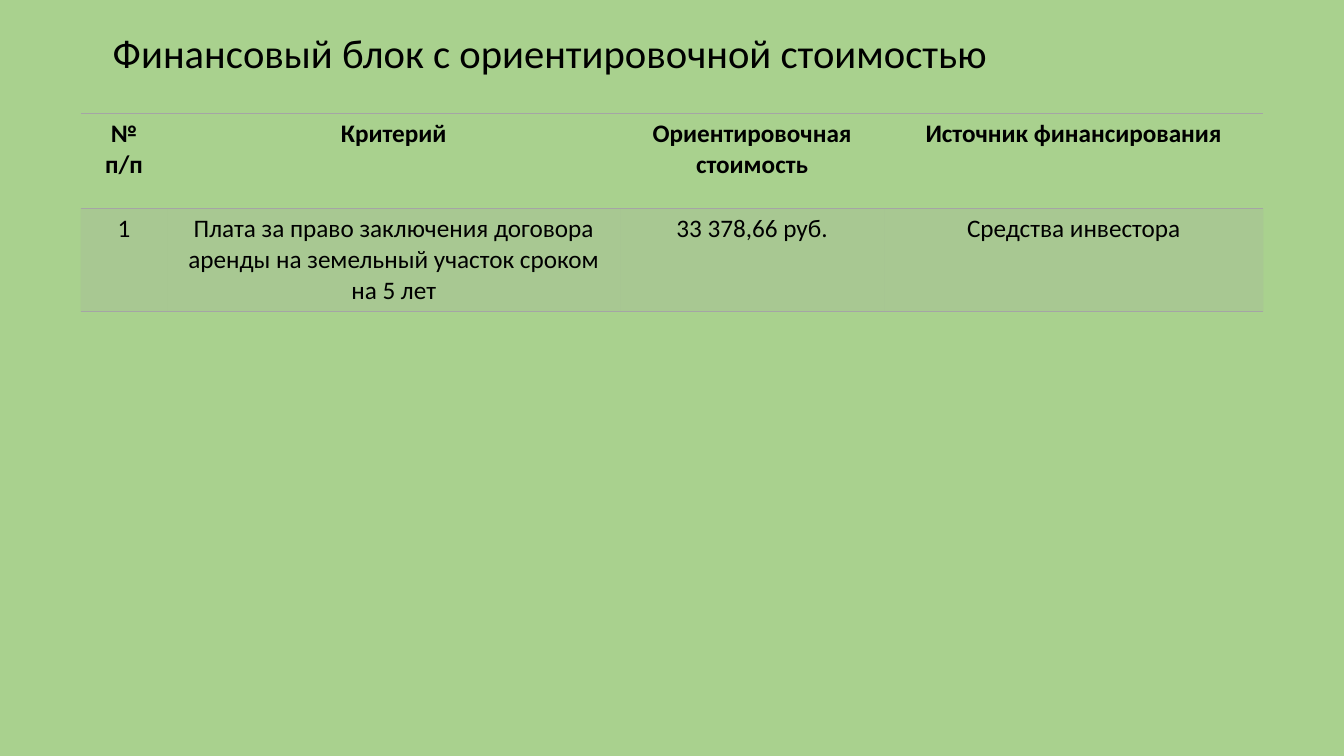
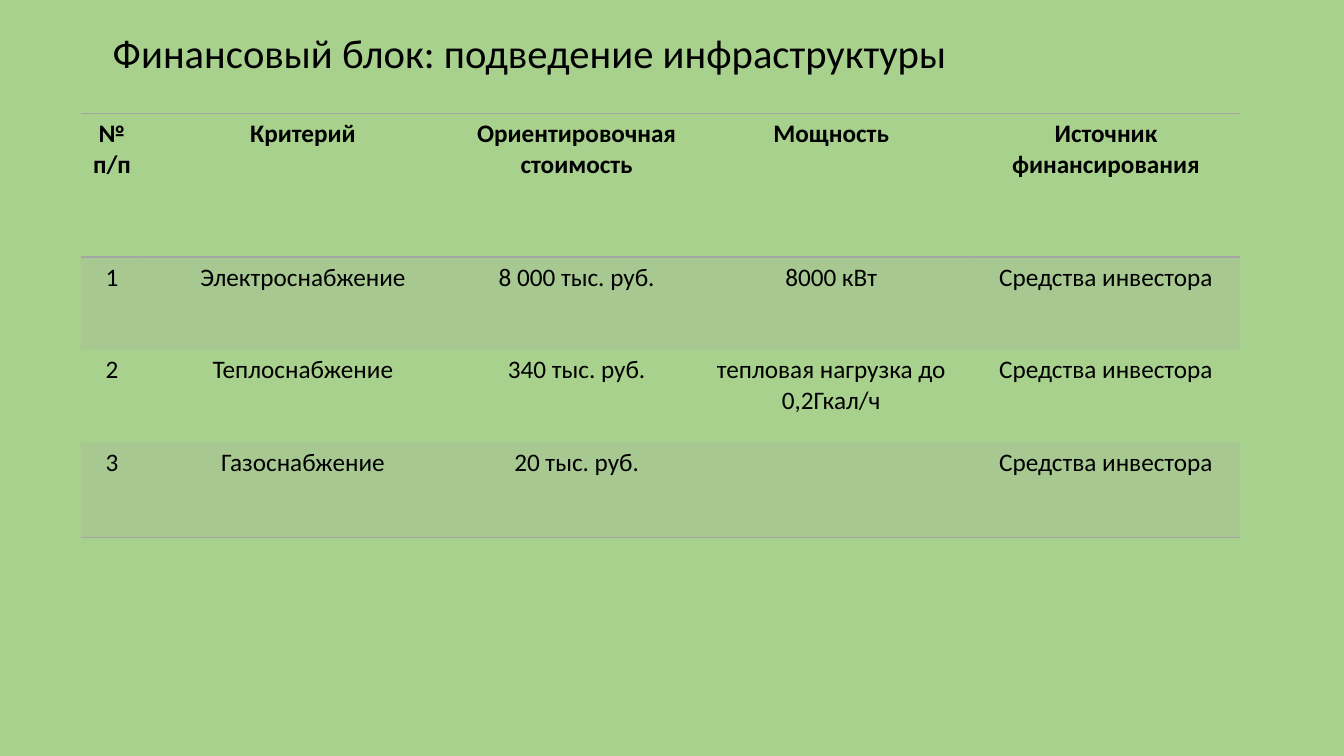
from lxml.etree import SubElement
from pptx import Presentation
from pptx.dml.color import RGBColor
from pptx.enum.text import MSO_ANCHOR, PP_ALIGN
from pptx.oxml.ns import qn
from pptx.util import Inches, Pt

FONT = "Calibri"
BACKGROUND, GRAY, BLACK = "A9D18E", "A5A5A5", "000000"
PLAIN_TABLE_STYLE = "{2D5ABB26-0587-4C30-8999-92F81FD0307C}"
TABLE_LEFT, TABLE_TOP = 0.8, 1.13
INVESTOR = "Средства инвестора"

SLIDES = [
    {
        "title": "Финансовый блок с ориентировочной стоимостью",
        "widths": [0.86, 4.49, 2.62, 3.76],
        "heights": [0.94, 1.02],
        "rows": [
            ["№ п/п", "Критерий", "Ориентировочная стоимость", "Источник финансирования"],
            [
                "1",
                "Плата за право заключения договора аренды на земельный участок сроком на 5 лет",
                "33 378,66 руб.",
                INVESTOR,
            ],
        ],
    },
    {
        "title": "Финансовый блок: подведение инфраструктуры",
        "widths": [0.62, 3.17, 2.26, 2.79, 2.66],
        "heights": [1.42, 0.92, 0.92, 0.94],
        "rows": [
            ["№ п/п", "Критерий", "Ориентировочная стоимость", "Мощность", "Источник финансирования"],
            ["1", "Электроснабжение", "8 000 тыс. руб.", "8000 кВт", INVESTOR],
            ["2", "Теплоснабжение", "340 тыс. руб.", "тепловая нагрузка до 0,2Гкал/ч", INVESTOR],
            ["3", "Газоснабжение", "20 тыс. руб.", "", INVESTOR],
        ],
    },
]


def color(value):
    return RGBColor.from_string(value)


def add_text(paragraph, text, size, bold=False):
    run = paragraph.add_run()
    run.text = text
    run.font.name = FONT
    run.font.size = Pt(size)
    run.font.bold = bold
    run.font.color.rgb = color(BLACK)


def add_title(slide, text):
    shape = slide.shapes.add_textbox(Inches(1.02), Inches(0.13), Inches(11.5), Inches(0.84))
    frame = shape.text_frame
    frame.word_wrap = True
    frame.vertical_anchor = MSO_ANCHOR.MIDDLE
    paragraph = frame.paragraphs[0]
    paragraph.line_spacing = 0.9
    add_text(paragraph, text, 29)


def fill_cell(cell, shaded):
    if not shaded:
        cell.fill.background()
        return
    cell.fill.solid()
    cell.fill.fore_color.rgb = color(GRAY)
    for tint in cell._tc.tcPr.iter(qn("a:srgbClr")):
        SubElement(tint, qn("a:alpha"), val="20000")


def add_borders(cell, edges):
    properties = cell._tc.get_or_add_tcPr()
    for position, edge in enumerate(edges):
        line = SubElement(properties, qn(f"a:{edge}"), w=str(Pt(1)))
        fill = SubElement(line, qn("a:solidFill"))
        SubElement(fill, qn("a:srgbClr"), val=GRAY)
        properties.insert(position, line)


def add_grid(slide, rows, widths, heights):
    shape = slide.shapes.add_table(
        len(rows), len(widths), Inches(TABLE_LEFT), Inches(TABLE_TOP),
        Inches(sum(widths)), Inches(sum(heights)),
    )
    table = shape.table
    for style in shape._element.iter(qn("a:tableStyleId")):
        style.text = PLAIN_TABLE_STYLE
    for column, width in zip(table.columns, widths):
        column.width = Inches(width)
    for row, height in zip(table.rows, heights):
        row.height = Inches(height)

    borders = {0: ["lnT", "lnB"], len(rows) - 1: ["lnB"]}
    for row_index, texts in enumerate(rows):
        for column_index, text in enumerate(texts):
            cell = table.cell(row_index, column_index)
            fill_cell(cell, shaded=row_index % 2 == 1)
            add_borders(cell, borders.get(row_index, []))
            paragraph = cell.text_frame.paragraphs[0]
            paragraph.alignment = PP_ALIGN.CENTER
            if text:
                add_text(paragraph, text, 18, bold=row_index == 0)


def main():
    """Build the financial slides and save the presentation."""
    presentation = Presentation()
    presentation.slide_width = Inches(13.33)
    presentation.slide_height = Inches(7.5)
    background = presentation.slide_master.background.fill
    background.solid()
    background.fore_color.rgb = color(BACKGROUND)
    for content in SLIDES:
        slide = presentation.slides.add_slide(presentation.slide_layouts[6])
        add_title(slide, content["title"])
        add_grid(slide, content["rows"], content["widths"], content["heights"])
    presentation.save("out.pptx")


if __name__ == "__main__":
    main()
